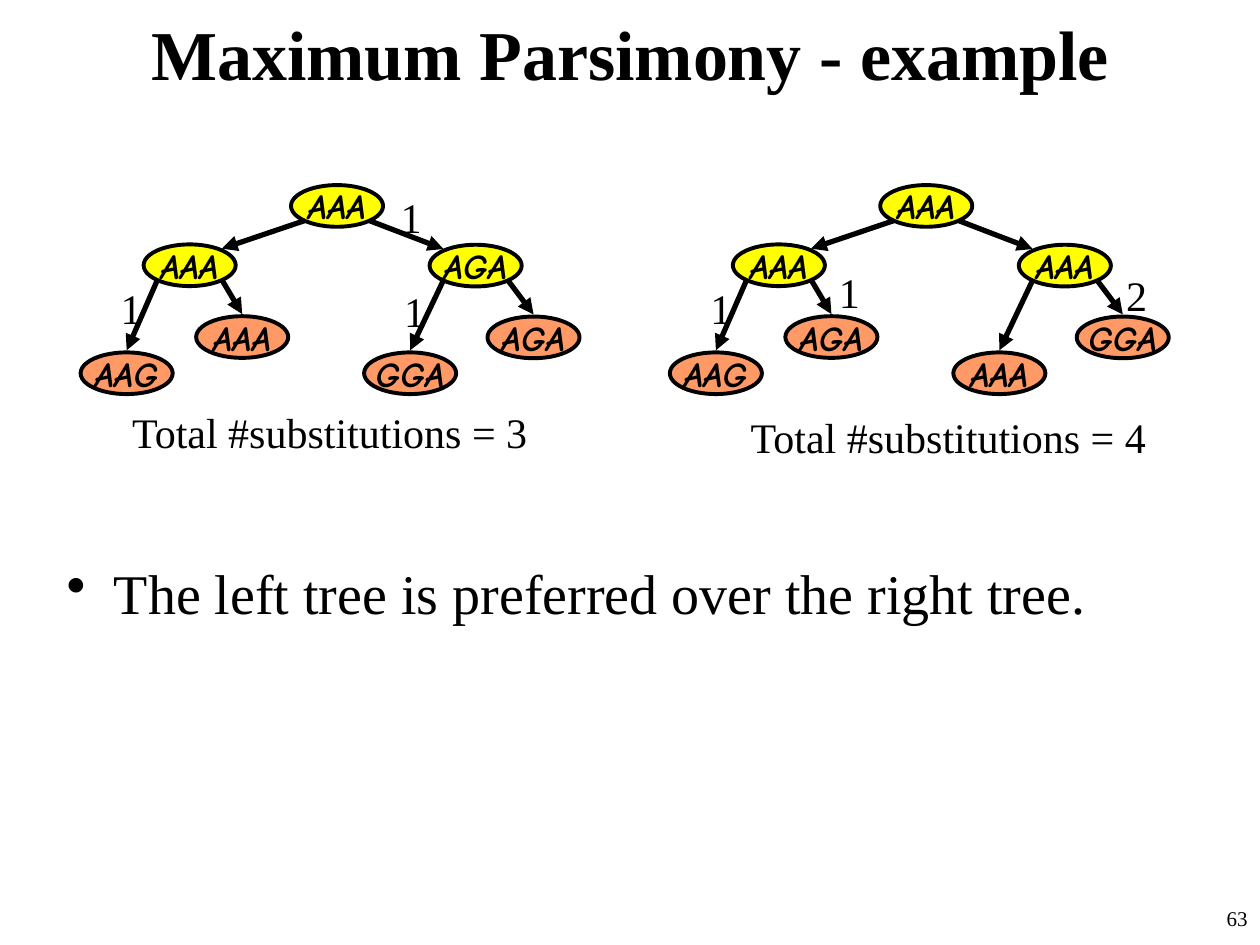
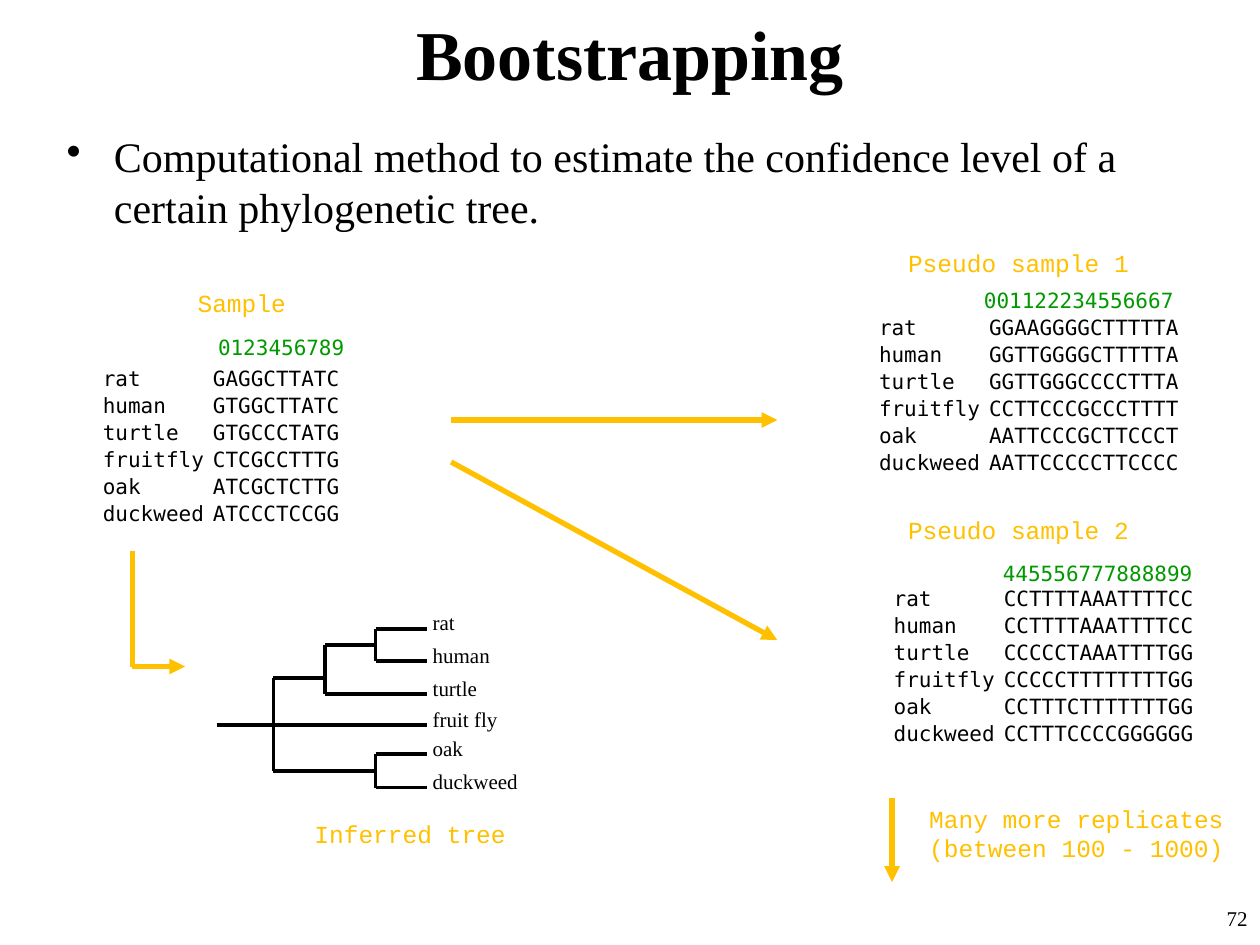
from dataclasses import dataclass

from lxml.etree import SubElement
from pptx import Presentation
from pptx.dml.color import RGBColor
from pptx.enum.shapes import MSO_CONNECTOR, MSO_SHAPE
from pptx.enum.text import MSO_ANCHOR, PP_ALIGN
from pptx.oxml.ns import qn
from pptx.slide import Slide
from pptx.text.text import TextFrame, _Paragraph
from pptx.util import Pt

BLACK = "000000"
ANCESTOR = "FFFF00"
LEAF = "FF9966"
GOLD = "FFC000"
GREEN = "009900"
SERIF = "Times New Roman"
TYPEWRITER = "Courier New"
MONO = "DejaVu Sans Mono"
COMIC = "Comic Neue"

NODE_WIDTH, NODE_HEIGHT = 52.6, 23.8
DIAGONAL_INSET = 0.15
TREE_SHIFT = 336.7
SPECIES = ("rat", "human", "turtle", "fruitfly", "oak", "duckweed")


@dataclass(frozen=True)
class Style:
    size: float
    font: str = SERIF
    color: str = BLACK
    align: PP_ALIGN = PP_ALIGN.LEFT
    bold: bool = False
    italic: bool = False


@dataclass(frozen=True)
class Position:
    x: float
    y: float
    fill: str


@dataclass(frozen=True)
class Cost:
    x: float
    y: float
    count: str


@dataclass(frozen=True)
class ParsimonyTree:
    shift: float
    states: tuple[str, ...]
    costs: tuple[Cost, ...]
    total: str
    total_x: float
    total_y: float


@dataclass(frozen=True)
class Alignment:
    heading: str
    heading_x: float
    heading_y: float
    heading_width: float
    columns: str
    columns_x: float
    columns_y: float
    rows_x: float
    rows_y: float
    sequences: tuple[str, ...]


@dataclass(frozen=True)
class Clade:
    stem_x: float
    stem_y: float
    x: float
    top: float
    bottom: float


@dataclass(frozen=True)
class Tip:
    name: str
    x: float
    y: float


@dataclass(frozen=True)
class Arrow:
    x1: float
    y1: float
    x2: float
    y2: float


TITLE = Style(40, align=PP_ALIGN.CENTER, bold=True)
PAGE_NUMBER = Style(12, align=PP_ALIGN.RIGHT)
STATE = Style(20, COMIC, align=PP_ALIGN.CENTER, bold=True, italic=True)
COUNT = Style(24)
TIP = Style(12)
CAPTION = Style(14, TYPEWRITER, GOLD, PP_ALIGN.CENTER)
SEQUENCE = Style(12, MONO)
COLUMN_INDEX = Style(12, MONO, GREEN)

POSITIONS = (
    Position(166.3, 105.8, ANCESTOR),
    Position(82.1, 139.7, ANCESTOR),
    Position(245.5, 139.9, ANCESTOR),
    Position(46.1, 201.4, LEAF),
    Position(112.1, 180.7, LEAF),
    Position(208.1, 201.4, LEAF),
    Position(278.6, 180.9, LEAF),
)

PARSIMONY_TREES = (
    ParsimonyTree(
        0, ("AAA", "AAA", "AGA", "AAG", "AAA", "GGA", "AGA"),
        (Cost(223.9, 159.8, "1"), Cost(61.9, 157.7, "1"), Cost(221.8, 105.8, "1")),
        "Total #substitutions = 3", 68.4, 229,
    ),
    ParsimonyTree(
        TREE_SHIFT, ("AAA", "AAA", "AAA", "AAG", "AGA", "AAA", "GGA"),
        (Cost(472.3, 149, "1"), Cost(398.9, 157.7, "1"), Cost(636.5, 150.5, "2")),
        "Total #substitutions = 4", 421.9, 231.8,
    ),
)

ALIGNMENTS = (
    Alignment(
        "Sample", 84.2, 161.3, 108, "0123456789", 124.6, 191, 58.8, 207.8,
        ("GAGGCTTATC", "GTGGCTTATC", "GTGCCCTATG",
         "CTCGCCTTTG", "ATCGCTCTTG", "ATCCCTCCGG"),
    ),
    Alignment(
        "Pseudo sample 1", 504, 138.2, 156.2, "001122234556667", 562.3, 164.2, 502.3, 178.7,
        ("GGAAGGGGCTTTTTA", "GGTTGGGGCTTTTTA", "GGTTGGGCCCCTTTA",
         "CCTTCCCGCCCTTTT", "AATTCCCGCTTCCCT", "AATTCCCCCTTCCCC"),
    ),
    Alignment(
        "Pseudo sample 2", 504, 290.9, 156.2, "445556777888899", 573.1, 320.2, 510.7, 333.5,
        ("CCTTTTAAATTTTCC", "CCTTTTAAATTTTCC", "CCCCCTAAATTTTGG",
         "CCCCCTTTTTTTTGG", "CCTTTCTTTTTTTGG", "CCTTTCCCCGGGGGG"),
    ),
)

ROOT_X, TRUNK_X, UPPER_X, PAIR_X, TIP_X = 123.8, 156.3, 185.7, 214.6, 244
CLADES = (
    Clade(UPPER_X, 368.5, PAIR_X, 359.2, 377.8),
    Clade(TRUNK_X, 387.2, UPPER_X, 368.5, 396.7),
    Clade(TRUNK_X, 440.6, PAIR_X, 431, 450),
)
TIPS = (
    Tip("rat", PAIR_X, 359.2),
    Tip("human", PAIR_X, 377.8),
    Tip("turtle", UPPER_X, 396.7),
    Tip("fruit fly", ROOT_X, 414.5),
    Tip("oak", PAIR_X, 431),
    Tip("duckweed", PAIR_X, 450),
)
ARROWS = (
    Arrow(75.6, 380.9, 105.8, 380.9),
    Arrow(257.8, 240, 444.2, 240),
    Arrow(257.8, 264, 444.2, 365.8),
    Arrow(509.8, 455.8, 509.8, 504),
)


def rgb(color: str) -> RGBColor:
    return RGBColor.from_string(color)


def apply_style(paragraph: _Paragraph, style: Style) -> None:
    paragraph.alignment = style.align
    font = paragraph.font
    font.size, font.name = Pt(style.size), style.font
    font.bold, font.italic = style.bold, style.italic
    font.color.rgb = rgb(style.color)


def add_text(slide: Slide, text: str, x: float, y: float, width: float, height: float,
             style: Style, margins: bool = True) -> TextFrame:
    frame = slide.shapes.add_textbox(Pt(x), Pt(y), Pt(width), Pt(height)).text_frame
    frame.word_wrap = True
    if not margins:
        frame.margin_left = frame.margin_right = frame.margin_top = frame.margin_bottom = 0
    frame.text = text
    for paragraph in frame.paragraphs:
        apply_style(paragraph, style)
    return frame


def add_line(slide: Slide, x1: float, y1: float, x2: float, y2: float,
             width: float = 2.25, color: str = BLACK, arrow: bool = False) -> None:
    line = slide.shapes.add_connector(MSO_CONNECTOR.STRAIGHT, Pt(x1), Pt(y1), Pt(x2), Pt(y2))
    line.line.width = Pt(width)
    line.line.color.rgb = rgb(color)
    if arrow:
        SubElement(line.line._get_or_add_ln(), qn("a:tailEnd"), type="triangle")
    SubElement(line._element.spPr, qn("a:effectLst"))


def add_base(presentation: Presentation, title: str, page: str) -> Slide:
    slide = presentation.slides.add_slide(presentation.slide_layouts[6])
    heading = add_text(slide, title, 0, 0, 720, 60.5, TITLE)
    heading.vertical_anchor = MSO_ANCHOR.MIDDLE
    add_text(slide, page, 570.2, 514.1, 149.8, 25.9, PAGE_NUMBER)
    return slide


def add_bullet(slide: Slide, text: str, y: float, height: float, size: float) -> None:
    frame = add_text(slide, text, 31, y, 652.3, height, Style(size))
    properties = frame.paragraphs[0]._p.get_or_add_pPr()
    properties.set("marL", str(Pt(27)))
    properties.set("indent", str(-Pt(27)))
    SubElement(properties, qn("a:buChar"), char="•")


def add_node(slide: Slide, position: Position, shift: float, state: str) -> None:
    node = slide.shapes.add_shape(MSO_SHAPE.OVAL, Pt(position.x + shift), Pt(position.y),
                                  Pt(NODE_WIDTH), Pt(NODE_HEIGHT))
    node.shadow.inherit = False
    node.fill.solid()
    node.fill.fore_color.rgb = rgb(position.fill)
    node.line.color.rgb = rgb(BLACK)
    node.line.width = Pt(2.25)
    frame = node.text_frame
    frame.word_wrap = False
    frame.vertical_anchor = MSO_ANCHOR.MIDDLE
    frame.text = state
    apply_style(frame.paragraphs[0], STATE)


def add_branch(slide: Slide, parent: Position, child: Position, left: bool, shift: float) -> None:
    near, far = DIAGONAL_INSET, 1 - DIAGONAL_INSET
    start, end = (near, far) if left else (far, near)
    end_x, end_y = (0.5, -0.05) if child.fill == LEAF else (end, 0.1)
    add_line(slide, parent.x + start * NODE_WIDTH + shift, parent.y + far * NODE_HEIGHT,
             child.x + end_x * NODE_WIDTH + shift, child.y + end_y * NODE_HEIGHT, 3, arrow=True)


def add_parsimony_tree(slide: Slide, tree: ParsimonyTree) -> None:
    for position, state in zip(POSITIONS, tree.states):
        add_node(slide, position, tree.shift, state)
    for index, child in enumerate(POSITIONS[1:], start=1):
        add_branch(slide, POSITIONS[(index - 1) // 2], child, index % 2 == 1, tree.shift)
    for cost in tree.costs:
        add_text(slide, cost.count, cost.x, cost.y, 26.6, 36, COUNT)
    add_text(slide, tree.total, tree.total_x, tree.total_y, 250, 36, COUNT)


def add_alignment(slide: Slide, alignment: Alignment) -> None:
    add_text(slide, alignment.heading, alignment.heading_x, alignment.heading_y,
             alignment.heading_width, 23.8, CAPTION)
    add_text(slide, alignment.columns, alignment.columns_x, alignment.columns_y,
             125, 14, COLUMN_INDEX, margins=False)
    rows = "\n".join(f"{name}\t{letters}" for name, letters in zip(SPECIES, alignment.sequences))
    frame = add_text(slide, rows, alignment.rows_x, alignment.rows_y,
                     190, 92.6, SEQUENCE, margins=False)
    for paragraph in frame.paragraphs:
        paragraph.line_spacing = Pt(15.43)
        tabs = SubElement(paragraph._p.get_or_add_pPr(), qn("a:tabLst"))
        SubElement(tabs, qn("a:tab"), pos=str(Pt(62.9)), algn="l")


def add_inferred_tree(slide: Slide) -> None:
    for clade in CLADES:
        add_line(slide, clade.stem_x, clade.stem_y, clade.x, clade.stem_y)
        add_line(slide, clade.x, clade.top, clade.x, clade.bottom)
    add_line(slide, TRUNK_X, CLADES[1].stem_y, TRUNK_X, CLADES[2].stem_y)
    for tip in TIPS:
        add_line(slide, tip.x, tip.y, TIP_X, tip.y)
        add_text(slide, tip.name, 240.2, tip.y - 14.2, 80, 21.6, TIP)
    add_text(slide, "Inferred tree", 153.4, 464.4, 162, 23.8, CAPTION)


def main() -> None:
    presentation = Presentation()
    presentation.slide_width, presentation.slide_height = Pt(720), Pt(540)

    parsimony = add_base(presentation, "Maximum Parsimony - example", "63")
    add_bullet(parsimony, "The left tree is preferred over the right tree.", 315.5, 50, 32)
    for tree in PARSIMONY_TREES:
        add_parsimony_tree(parsimony, tree)

    bootstrapping = add_base(presentation, "Bootstrapping", "72")
    add_bullet(bootstrapping, "Computational method to estimate the confidence level of a "
               "certain phylogenetic tree.", 71.3, 62.6, 24)
    for alignment in ALIGNMENTS:
        add_alignment(bootstrapping, alignment)
    add_inferred_tree(bootstrapping)
    add_line(bootstrapping, 75.6, 314.6, 75.6, 380.9, 3, GOLD)
    for arrow in ARROWS:
        add_line(bootstrapping, arrow.x1, arrow.y1, arrow.x2, arrow.y2, 3, GOLD, arrow=True)
    add_text(bootstrapping, "Many more replicates (between 100 - 1000)",
             516.2, 455.8, 198, 41, CAPTION)

    presentation.save("out.pptx")


if __name__ == "__main__":
    main()
